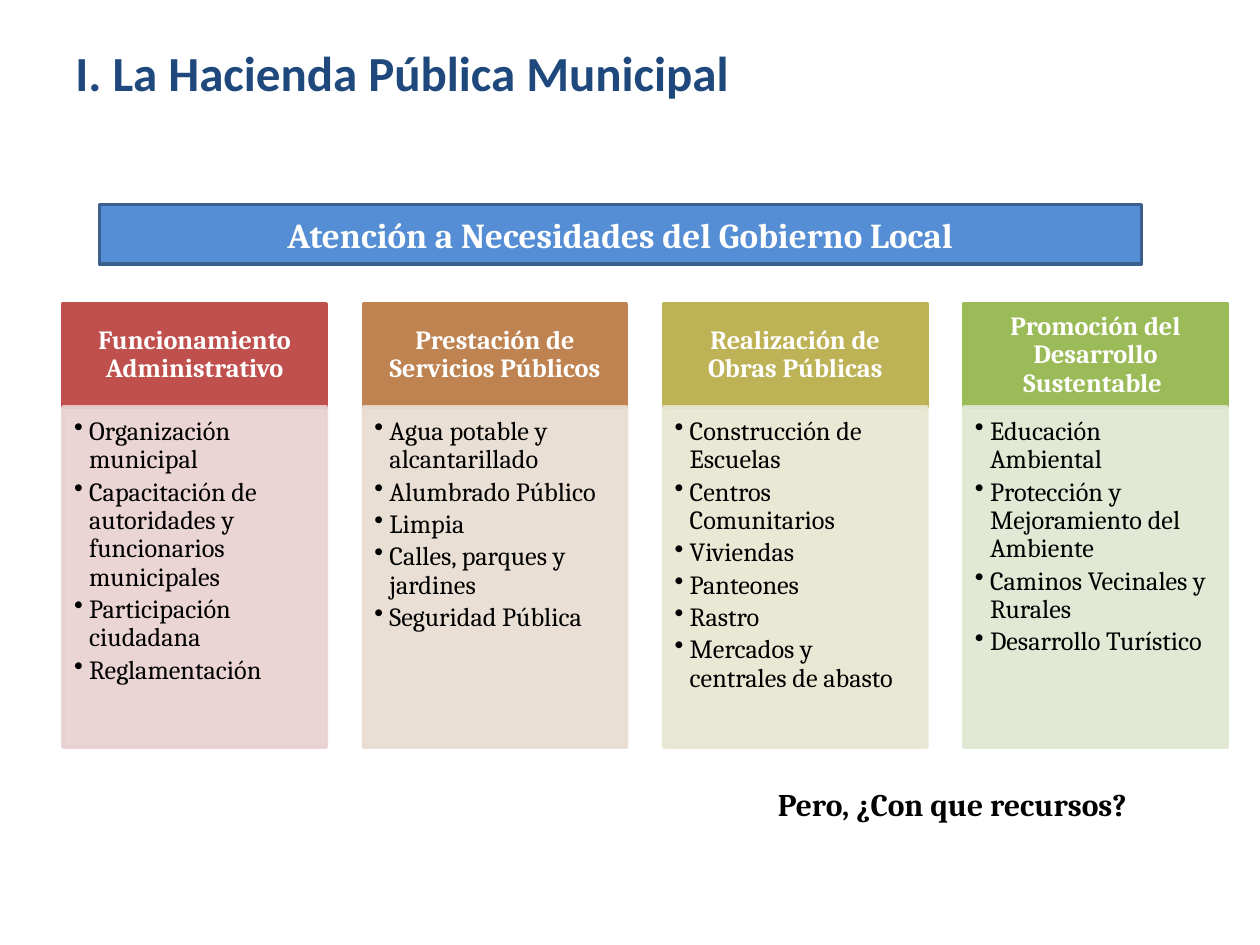
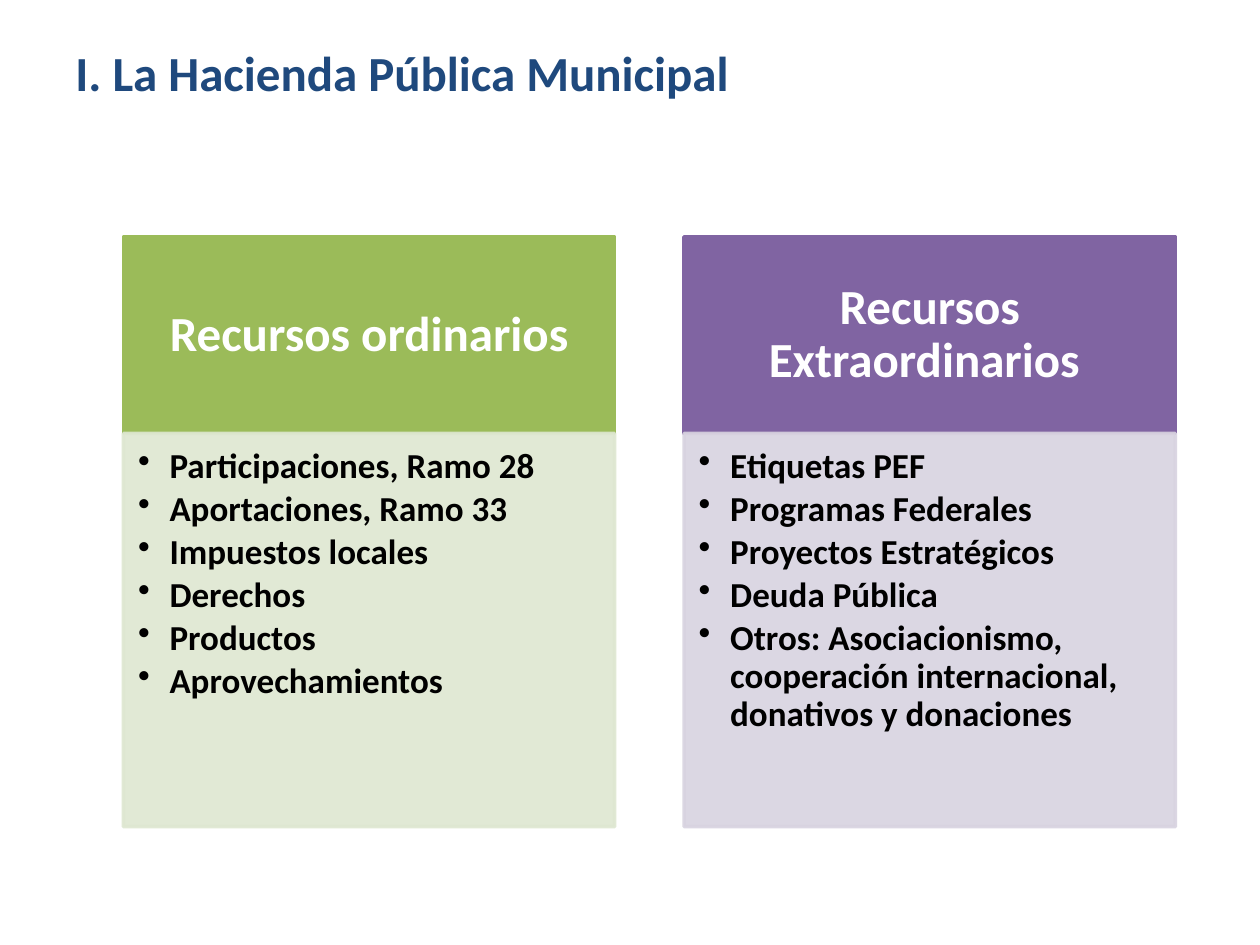
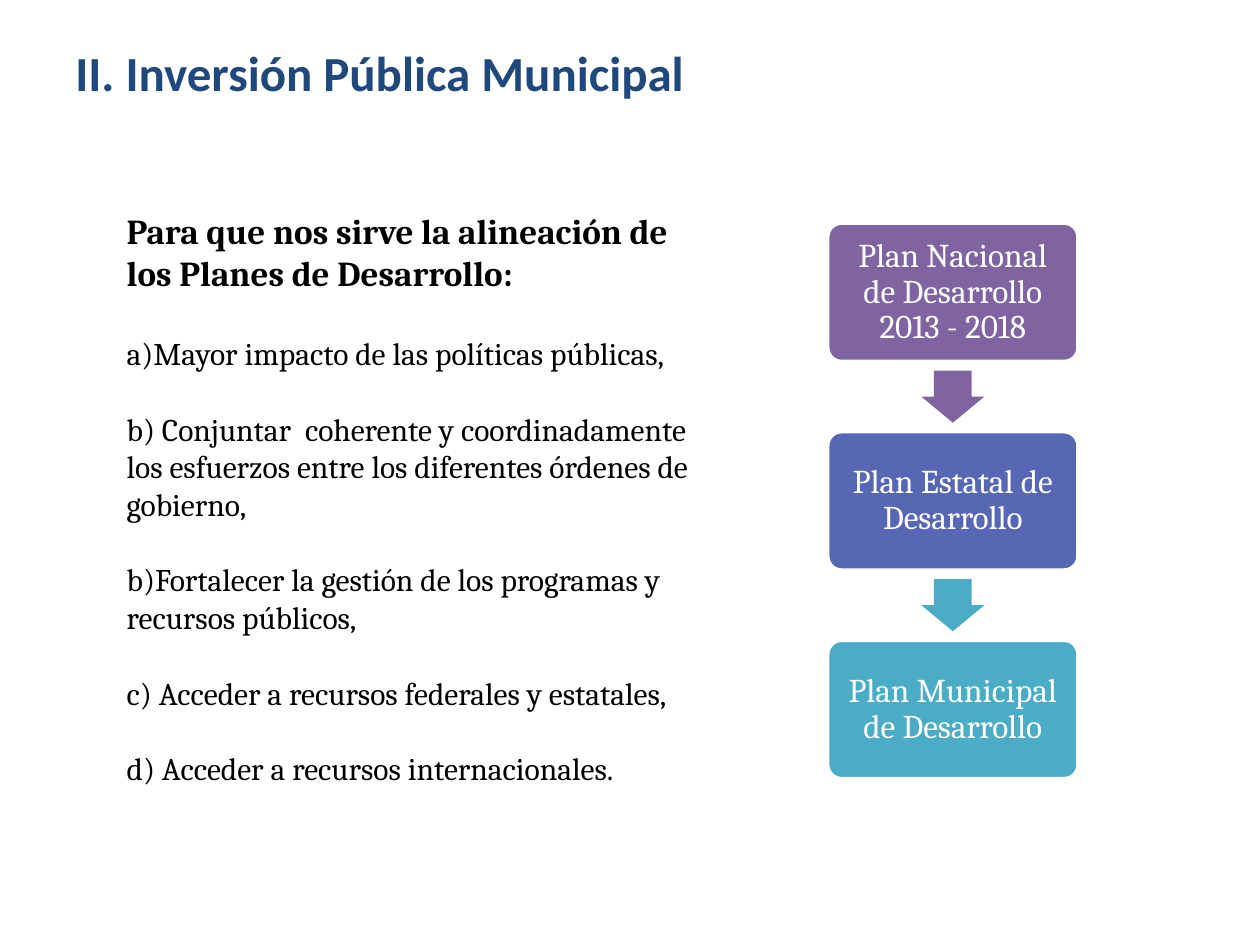
from lxml import etree
from pptx import Presentation
from pptx import util as u
from pptx.dml import color
from pptx.enum import shapes, text
from pptx.oxml import ns

Pt = u.Pt
RGB = color.RGBColor

# Shared colours
WHITE = RGB(0xFF, 0xFF, 0xFF)
BLACK = RGB(0x00, 0x00, 0x00)
NAVY = RGB(0x1F, 0x49, 0x7D)
BANNER_BLUE = RGB(0x55, 0x8E, 0xD5)
BANNER_EDGE = RGB(0x3A, 0x5F, 0x8C)
RED, RED_TINT = RGB(0xC0, 0x50, 0x4D), RGB(0xE8, 0xD0, 0xD0)
BROWN, BROWN_TINT = RGB(0xBE, 0x83, 0x51), RGB(0xE8, 0xDC, 0xD0)
OLIVE, OLIVE_TINT = RGB(0xBD, 0xB2, 0x55), RGB(0xE7, 0xE6, 0xD1)
GREEN, GREEN_TINT = RGB(0x9B, 0xBB, 0x59), RGB(0xDE, 0xE7, 0xD1)
PURPLE, PURPLE_TINT = RGB(0x80, 0x64, 0xA2), RGB(0xD8, 0xD3, 0xE0)
INDIGO = RGB(0x57, 0x67, 0xB4)
TEAL = RGB(0x4B, 0xAC, 0xC6)

# Shared fonts and measures
SANS, SERIF = "Calibri", "Cambria"
TITLE_BOX = (36, 21, 648, 39.6)
DEFAULT_INSETS = (7.2, 3.6, 7.2, 3.6)
EDGE = 2
LINE_HEIGHT = 1.19

LEFT, CENTER = text.PP_ALIGN.LEFT, text.PP_ALIGN.CENTER
RIGHT, JUSTIFY = text.PP_ALIGN.RIGHT, text.PP_ALIGN.JUSTIFY
TOP, MIDDLE = text.MSO_ANCHOR.TOP, text.MSO_ANCHOR.MIDDLE
PRESET = shapes.MSO_SHAPE

# Column styles: sizes, insets and bullet indent for each slide
NEEDS_STYLE = dict(font=SERIF, header_size=15, body_size=15, body_bold=False, indent=8.64,
                   header_insets=(8.4, 4.8, 8.4, 4.8), body_insets=(6.3, 6.3, 8.4, 9.45))
RESOURCES_STYLE = dict(font=SANS, header_size=28, body_size=20, body_bold=True, indent=18,
                       header_insets=(15.7, 9, 15.7, 9), body_insets=(8.4, 8.4, 11.2, 12.6))

NEEDS = [
    ("Funcionamiento Administrativo", RED, RED_TINT,
     ["Organización municipal", "Capacitación de autoridades y funcionarios municipales",
      "Participación ciudadana", "Reglamentación"]),
    ("Prestación de Servicios Públicos", BROWN, BROWN_TINT,
     ["Agua potable y alcantarillado", "Alumbrado Público", "Limpia",
      "Calles, parques y jardines", "Seguridad Pública"]),
    ("Realización de Obras Públicas", OLIVE, OLIVE_TINT,
     ["Construcción de Escuelas", "Centros Comunitarios", "Viviendas", "Panteones",
      "Rastro", "Mercados y centrales de abasto"]),
    ("Promoción del Desarrollo Sustentable ", GREEN, GREEN_TINT,
     ["Educación Ambiental", "Protección y Mejoramiento del Ambiente",
      "Caminos Vecinales y Rurales", "Desarrollo Turístico"]),
]
RESOURCES = [
    ("Recursos ordinarios", GREEN, GREEN_TINT,
     ["Participaciones, Ramo 28", "Aportaciones, Ramo 33", "Impuestos locales",
      "Derechos", "Productos", "Aprovechamientos"]),
    ("Recursos Extraordinarios ", PURPLE, PURPLE_TINT,
     ["Etiquetas PEF", "Programas Federales", "Proyectos Estratégicos", "Deuda Pública",
      "Otros: Asociacionismo, cooperación internacional, donativos y donaciones"]),
]
PLANS = [
    ("Plan Nacional de Desarrollo 2013 - 2018", PURPLE),
    ("Plan Estatal de Desarrollo", INDIGO),
    ("Plan Municipal de Desarrollo", TEAL),
]
PLAN_ARROWS = [PURPLE, TEAL]
ALIGNMENT_HEADING = "Para que nos sirve la alineación de los Planes de Desarrollo:"
ALIGNMENT_REASONS = [
    "a)Mayor impacto de las políticas públicas,",
    "b) Conjuntar  coherente y coordinadamente los esfuerzos entre los diferentes órdenes de gobierno,",
    "b)Fortalecer la gestión de los programas y recursos públicos,",
    "c) Acceder a recursos federales y estatales,",
    "d) Acceder a recursos internacionales.",
]


# Building blocks
def apply_format(target, values):
    for name, value in values.items():
        setattr(target, name, value)


def set_opacity(fill_format, percent):
    """Give the solid fill of a shape or line an alpha value."""
    color_element = fill_format._xPr.find(ns.qn("a:solidFill"))[0]
    etree.SubElement(color_element, ns.qn("a:alpha")).set("val", str(percent * 1000))


def add_block(slide, preset, box, fill, line=None, opacity=None):
    shape = slide.shapes.add_shape(preset, *map(Pt, box))
    shape.shadow.inherit = False
    shape.fill.solid()
    shape.fill.fore_color.rgb = fill
    if line is None:
        shape.line.fill.background()
    else:
        shape.line.color.rgb = line
        shape.line.width = Pt(EDGE)
    if opacity:
        set_opacity(shape.fill, opacity)
        set_opacity(shape.line.fill, opacity)
    return shape


def prepare_frame(shape, anchor=TOP, insets=DEFAULT_INSETS):
    sides = ("margin_left", "margin_top", "margin_right", "margin_bottom")
    apply_format(shape.text_frame, {"word_wrap": True, "vertical_anchor": anchor,
                                    **dict(zip(sides, map(Pt, insets)))})


def write(shape, lines, font, size, ink, bold=False, indent=None, **paragraph_format):
    """Add the lines after any text that the shape already holds."""
    frame = shape.text_frame
    for line in lines:
        paragraph = frame.add_paragraph() if frame.text else frame.paragraphs[0]
        apply_format(paragraph, paragraph_format)
        run = paragraph.add_run()
        run.text = line
        apply_format(run.font, {"name": font, "size": Pt(size), "bold": bold})
        run.font.color.rgb = ink
        if indent:
            add_bullet(paragraph, indent)


def add_bullet(paragraph, indent):
    properties = paragraph._p.get_or_add_pPr()
    properties.set("marL", str(Pt(indent)))
    properties.set("indent", str(-Pt(indent)))
    etree.SubElement(properties, ns.qn("a:buChar")).set("char", "•")


def add_label(slide, box):
    label = slide.shapes.add_textbox(*map(Pt, box))
    prepare_frame(label)
    return label


# Regions
def add_titled_slide(presentation, title):
    slide = presentation.slides.add_slide(presentation.slide_layouts[6])
    write(add_label(slide, TITLE_BOX), [title], SANS, 28, NAVY, bold=True, alignment=JUSTIFY)
    return slide


def add_column(slide, box, header_height, content, style):
    left, top, width, height = box
    heading, fill, tint, items = content
    header = add_block(slide, PRESET.RECTANGLE, (left, top, width, header_height), fill, fill)
    prepare_frame(header, MIDDLE, style["header_insets"])
    write(header, [heading], style["font"], style["header_size"], WHITE, bold=True,
          alignment=CENTER, line_spacing=0.9)

    body_box = (left, top + header_height, width, height - header_height)
    body = add_block(slide, PRESET.RECTANGLE, body_box, tint, tint, opacity=90)
    prepare_frame(body, TOP, style["body_insets"])
    write(body, items, style["font"], style["body_size"], BLACK, bold=style["body_bold"],
          indent=style["indent"], alignment=LEFT, line_spacing=0.9,
          space_after=Pt(0.15 * style["body_size"]))


def add_columns(slide, box, column_width, header_height, contents, style):
    left, top, width, height = box
    pitch = (width - column_width) / (len(contents) - 1)
    for index, content in enumerate(contents):
        column_box = (left + index * pitch, top, column_width, height)
        add_column(slide, column_box, header_height, content, style)


def add_plan_chain(slide, box, plan_height):
    left, top, width, height = box
    arrow_width, arrow_height = 36, 29.8
    pitch = (height - plan_height) / (len(PLANS) - 1)
    for index, (name, fill) in enumerate(PLANS):
        plan_box = (left, top + index * pitch, width, plan_height)
        plan = add_block(slide, PRESET.ROUNDED_RECTANGLE, plan_box, fill, WHITE)
        plan.adjustments[0] = 0.1
        prepare_frame(plan, MIDDLE, (8, 8, 8, 8))
        write(plan, [name], SERIF, 19, WHITE, alignment=CENTER, line_spacing=0.9)

    # Arrows centred in the gaps
    arrow_left = left + (width - arrow_width) / 2
    arrow_top = top + (pitch + plan_height - arrow_height) / 2
    for index, fill in enumerate(PLAN_ARROWS):
        arrow_box = (arrow_left, arrow_top + index * pitch, arrow_width, arrow_height)
        arrow = add_block(slide, PRESET.DOWN_ARROW, arrow_box, fill)
        arrow.adjustments[0], arrow.adjustments[1] = 0.6, 0.5


def add_alignment_reasons(slide, box):
    label = add_label(slide, box)
    write(label, [ALIGNMENT_HEADING], SERIF, 20, BLACK, bold=True,
          space_after=Pt(0.1 * 20))
    write(label, ALIGNMENT_REASONS, SERIF, 18, BLACK, space_before=Pt(LINE_HEIGHT * 18))


# Slides
def build_needs_slide(presentation):
    slide = add_titled_slide(presentation, "I. La Hacienda Pública Municipal")
    add_columns(slide, (36, 173.5, 665.3, 253.5), 150.5, 59, NEEDS, NEEDS_STYLE)
    banner = add_block(slide, PRESET.RECTANGLE, (56.9, 116.9, 595.4, 34), BANNER_BLUE, BANNER_EDGE)
    prepare_frame(banner, MIDDLE)
    write(banner, ["Atención a Necesidades del Gobierno Local"], SERIF, 20, WHITE,
          bold=True, alignment=CENTER)
    question = add_label(slide, (411, 445, 244, 29))
    write(question, ["Pero, ¿Con que recursos? "], SERIF, 18, BLACK, bold=True, alignment=RIGHT)


def build_resources_slide(presentation):
    slide = add_titled_slide(presentation, "I. La Hacienda Pública Municipal")
    add_columns(slide, (70.5, 135.4, 601.2, 337), 280.8, 112.3, RESOURCES, RESOURCES_STYLE)


def build_investment_slide(presentation):
    slide = add_titled_slide(presentation, "II. Inversión Pública Municipal")
    add_plan_chain(slide, (473, 127.5, 143, 317.5), 79.1)
    add_alignment_reasons(slide, (65.3, 116, 346.5, 342))


def main():
    presentation = Presentation()
    presentation.slide_width, presentation.slide_height = Pt(720), Pt(540)
    build_needs_slide(presentation)
    build_resources_slide(presentation)
    build_investment_slide(presentation)
    presentation.save("out.pptx")


if __name__ == "__main__":
    main()
